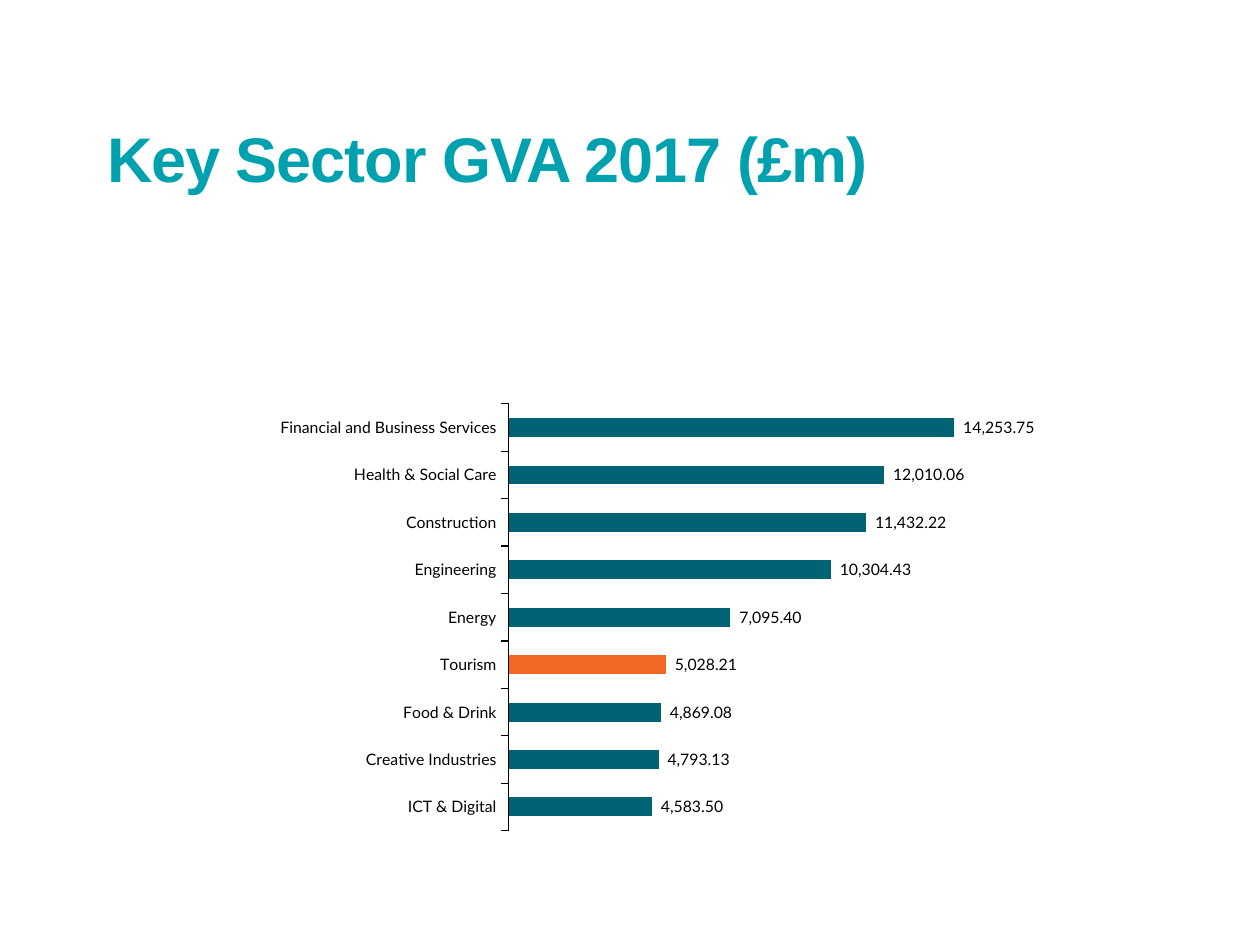
from typing import NamedTuple

from lxml import etree
from pptx import Presentation
from pptx.chart.data import CategoryChartData
from pptx.dml.color import RGBColor
from pptx.enum.chart import XL_CHART_TYPE, XL_LABEL_POSITION, XL_TICK_MARK
from pptx.enum.text import MSO_ANCHOR
from pptx.oxml.ns import qn
from pptx.util import Pt

BAR_CLUSTERED = XL_CHART_TYPE.BAR_CLUSTERED
OUTSIDE_END = XL_LABEL_POSITION.OUTSIDE_END
TICK_OUT, TICK_NONE = XL_TICK_MARK.OUTSIDE, XL_TICK_MARK.NONE
ANCHOR_BOTTOM = MSO_ANCHOR.BOTTOM

TITLE_TEAL = RGBColor(0x00, 0xA1, 0xAF)
BAR_TEAL = RGBColor(0x00, 0x63, 0x73)
HIGHLIGHT = RGBColor(0xF2, 0x67, 0x24)
BLACK = RGBColor(0x00, 0x00, 0x00)
NUMBER_FORMAT = "_(* #,##0.00_)"


class Box(NamedTuple):
    left: float
    top: float
    width: float
    height: float

    def in_points(self) -> list:
        return [Pt(v) for v in self]


class Sector(NamedTuple):
    name: str
    gva: float
    color: RGBColor = BAR_TEAL


# Bottom bar first
SECTORS = [
    Sector("ICT & Digital", 4583.50),
    Sector("Creative Industries", 4793.13),
    Sector("Food & Drink", 4869.08),
    Sector("Tourism", 5028.21, HIGHLIGHT),
    Sector("Energy", 7095.40),
    Sector("Engineering", 10304.43),
    Sector("Construction", 11432.22),
    Sector("Health & Social Care", 12010.06),
    Sector("Financial and Business Services", 14253.75),
]
TITLE_BOX = Box(61.2, 12.24, 591.84, 99.36)
CHART_BOX = Box(52.56, 228.24, 595.44, 254.16)
PLOT_SHARE = Box(0.4, 0.01, 0.48, 0.96)  # fractions of the chart area


def add_title(s, text: str, box: Box) -> None:
    tf = s.shapes.add_textbox(*box.in_points()).text_frame
    tf.word_wrap = True
    tf.vertical_anchor = ANCHOR_BOTTOM
    tf.margin_left = tf.margin_right = tf.margin_top = tf.margin_bottom = 0
    p = tf.paragraphs[0]
    p.line_spacing = Pt(68)
    r = p.add_run()
    r.text = text
    r.font.name = "Arial"
    r.font.size = Pt(36)
    r.font.bold = True
    r.font.color.rgb = TITLE_TEAL
    r.font._element.set("spc", "-60")


def set_plot_layout(chart, share: Box) -> None:
    plot_area = chart._chartSpace.chart.plotArea
    for old in plot_area.findall(qn("c:layout")):
        plot_area.remove(old)
    layout = etree.Element(qn("c:layout"))
    manual = etree.SubElement(layout, qn("c:manualLayout"))
    settings = [("layoutTarget", "inner"), ("xMode", "edge"), ("yMode", "edge")]
    settings += zip("xywh", share)
    for tag, value in settings:
        etree.SubElement(manual, qn(f"c:{tag}")).set("val", str(value))
    plot_area.insert(0, layout)


def add_bar_chart(s, sectors: list[Sector], box: Box) -> None:
    data = CategoryChartData(number_format=NUMBER_FORMAT)
    data.categories = [sector.name for sector in sectors]
    data.add_series("Series 1", [sector.gva for sector in sectors])
    chart = s.shapes.add_chart(BAR_CLUSTERED, *box.in_points(), data).chart
    chart.has_legend = False
    chart.has_title = False
    chart.font.name = "Lato"
    chart.font.size = Pt(9)
    chart.font.color.rgb = BLACK
    set_plot_layout(chart, PLOT_SHARE)

    # Axes
    cat_axis, val_axis = chart.category_axis, chart.value_axis
    cat_axis.major_tick_mark = TICK_OUT
    cat_axis.minor_tick_mark = TICK_NONE
    cat_axis.format.line.color.rgb = BLACK
    cat_axis.format.line.width = Pt(0.75)
    val_axis.minimum_scale, val_axis.maximum_scale = 0, 16000
    val_axis.has_major_gridlines = False
    val_axis.visible = False

    # Bars
    plot = chart.plots[0]
    plot.gap_width = 150
    plot.vary_by_categories = False
    series = plot.series[0]
    series.invert_if_negative = False
    series.format.fill.solid()
    series.format.fill.fore_color.rgb = BAR_TEAL
    for i, sector in enumerate(sectors):
        if sector.color != BAR_TEAL:
            fill = series.points[i].format.fill
            fill.solid()
            fill.fore_color.rgb = sector.color

    # Value labels
    labels = series.data_labels
    labels.show_value = True
    labels.position = OUTSIDE_END
    labels.number_format = NUMBER_FORMAT
    labels.number_format_is_linked = False


def main() -> None:
    prs = Presentation()
    prs.slide_width, prs.slide_height = Pt(720), Pt(540)
    s = prs.slides.add_slide(prs.slide_layouts[6])
    add_title(s, "Key Sector GVA 2017 (£m)", TITLE_BOX)
    add_bar_chart(s, SECTORS, CHART_BOX)
    prs.save("out.pptx")


if __name__ == "__main__":
    main()
